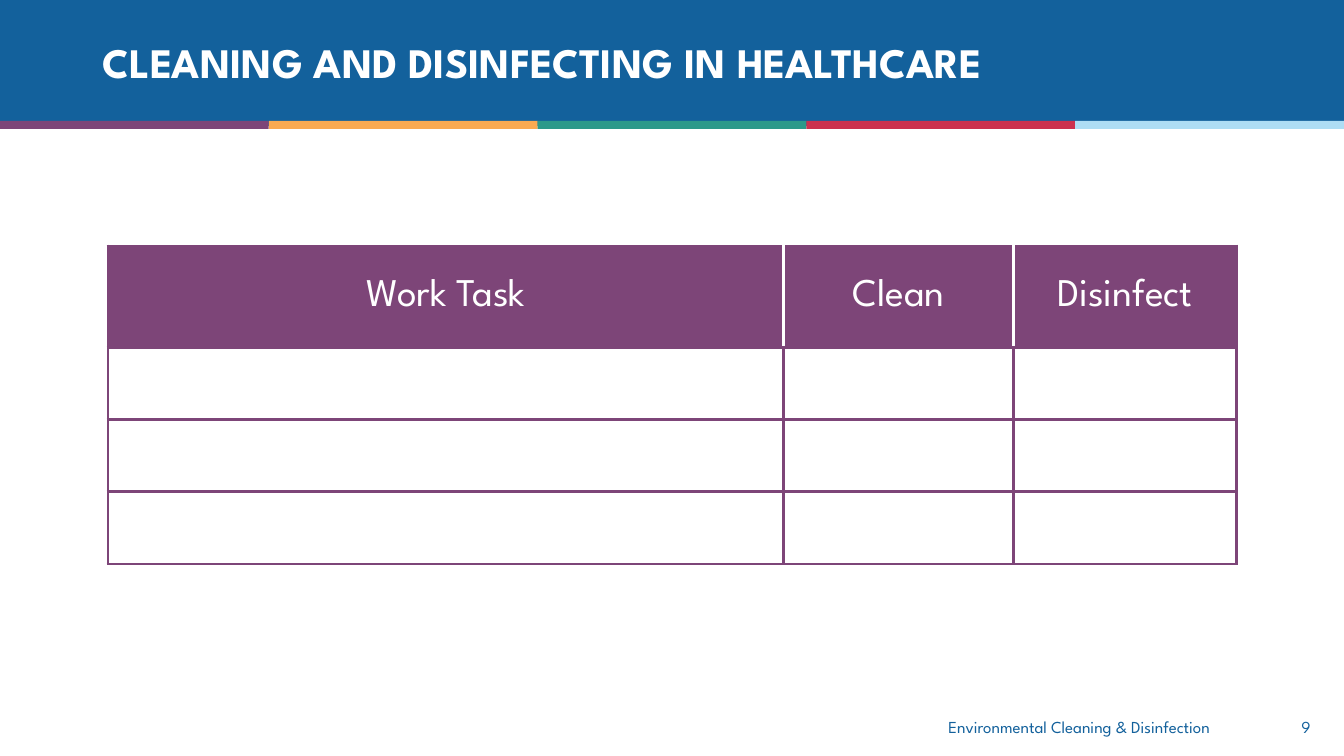
"""Builds a slide with a blank cleaning and disinfecting worksheet table."""
from lxml import etree
from pptx import Presentation
from pptx.dml.color import RGBColor
from pptx.enum.shapes import MSO_SHAPE as Shape
from pptx.enum.text import MSO_ANCHOR as Anchor, PP_ALIGN as Align
from pptx.oxml.ns import qn
from pptx.util import Cm, Pt

FONT = "League Spartan"
BLUE, PURPLE, WHITE = "13619C", "7D4578", "FFFFFF"
STRIPES = [PURPLE, "FAAA51", "2C998A", "CC314E", "AEDDF4"]
WIDTH, HEIGHT = 33.87, 19.05
HEADERS = ["Work Task", "Clean", "Disinfect"]
COL_WIDTHS = [17.03, 5.79, 5.62]
ROW_HEIGHTS = [2.55, 1.82, 1.82, 1.82]


def paint(target, color):
    """Give a fill or a font a solid colour."""
    if hasattr(target, "solid"):
        target.solid()
        target.fore_color.rgb = RGBColor.from_string(color)
    else:
        target.color.rgb = RGBColor.from_string(color)


def add_bar(s, x, y, w, h, color):
    """Add a plain filled rectangle."""
    sp = s.shapes.add_shape(Shape.RECTANGLE, Cm(x), Cm(y), Cm(w), Cm(h))
    sp.shadow.inherit = False
    paint(sp.fill, color)
    sp.line.fill.background()


def write(p, text, size, color, align, bold=False):
    """Add one formatted run to a paragraph."""
    p.alignment = align
    r = p.add_run()
    r.text = text
    r.font.name, r.font.size, r.font.bold = FONT, Pt(size), bold
    paint(r.font, color)


def add_text(s, x, y, w, h, text, size, color, align, bold=False):
    """Add a vertically centred text box."""
    tf = s.shapes.add_textbox(Cm(x), Cm(y), Cm(w), Cm(h)).text_frame
    tf.word_wrap = True
    tf.vertical_anchor = Anchor.MIDDLE
    p = tf.paragraphs[0]
    write(p, text, size, color, align, bold)
    return p


def set_borders(cell, **colors):
    """Draw the four cell borders, purple unless a side says otherwise."""
    tcPr = cell._tc.get_or_add_tcPr()
    for i, side in enumerate("LRTB"):
        ln = etree.Element(qn(f"a:ln{side}"), w=str(Pt(2.25)))
        fill = etree.SubElement(ln, qn("a:solidFill"))
        etree.SubElement(fill, qn("a:srgbClr"), val=colors.get(side, PURPLE))
        tcPr.insert(i, ln)


def add_worksheet(s, x, y):
    """Add the table with a header row and empty rows to fill in."""
    table = s.shapes.add_table(len(ROW_HEIGHTS), len(COL_WIDTHS), Cm(x), Cm(y),
                               Cm(sum(COL_WIDTHS)), Cm(sum(ROW_HEIGHTS))).table
    for col, w in zip(table.columns, COL_WIDTHS):
        col.width = Cm(w)
    for row, h in zip(table.rows, ROW_HEIGHTS):
        row.height = Cm(h)
        for cell in row.cells:
            paint(cell.fill, WHITE)
            set_borders(cell)
    last = len(HEADERS) - 1
    for i, text in enumerate(HEADERS):
        cell = table.cell(0, i)
        paint(cell.fill, PURPLE)
        cell.vertical_anchor = Anchor.MIDDLE
        write(cell.text_frame.paragraphs[0], text, 28, WHITE, Align.CENTER)
        for side, inner in (("L", i > 0), ("R", i < last)):
            if inner:
                color = cell._tc.tcPr.find(f"{qn('a:ln' + side)}//{qn('a:srgbClr')}")
                color.set("val", WHITE)


def main():
    """Build and save the slide."""
    prs = Presentation()
    prs.slide_width, prs.slide_height = Cm(WIDTH), Cm(HEIGHT)
    s = prs.slides.add_slide(prs.slide_layouts[6])
    add_bar(s, 0, 0, WIDTH, 3.18, BLUE)
    stripe = WIDTH / len(STRIPES)
    for i, color in enumerate(STRIPES):
        add_bar(s, i * stripe, 3.05, stripe, 0.2, color)
    title = add_text(s, 2.34, 0.66, 29.21, 1.96, "CLEANING AND DISINFECTING IN HEALTHCARE",
                     30, WHITE, Align.LEFT, bold=True)
    title.line_spacing = 0.9
    add_worksheet(s, 2.72, 6.2)
    add_text(s, 13, 17.81, 17.75, 1.02, "Environmental Cleaning & Disinfection",
             12, BLUE, Align.RIGHT)
    add_text(s, 31.55, 17.81, 1.73, 1.02, "9", 12, BLUE, Align.RIGHT)
    prs.save("out.pptx")


if __name__ == "__main__":
    main()
